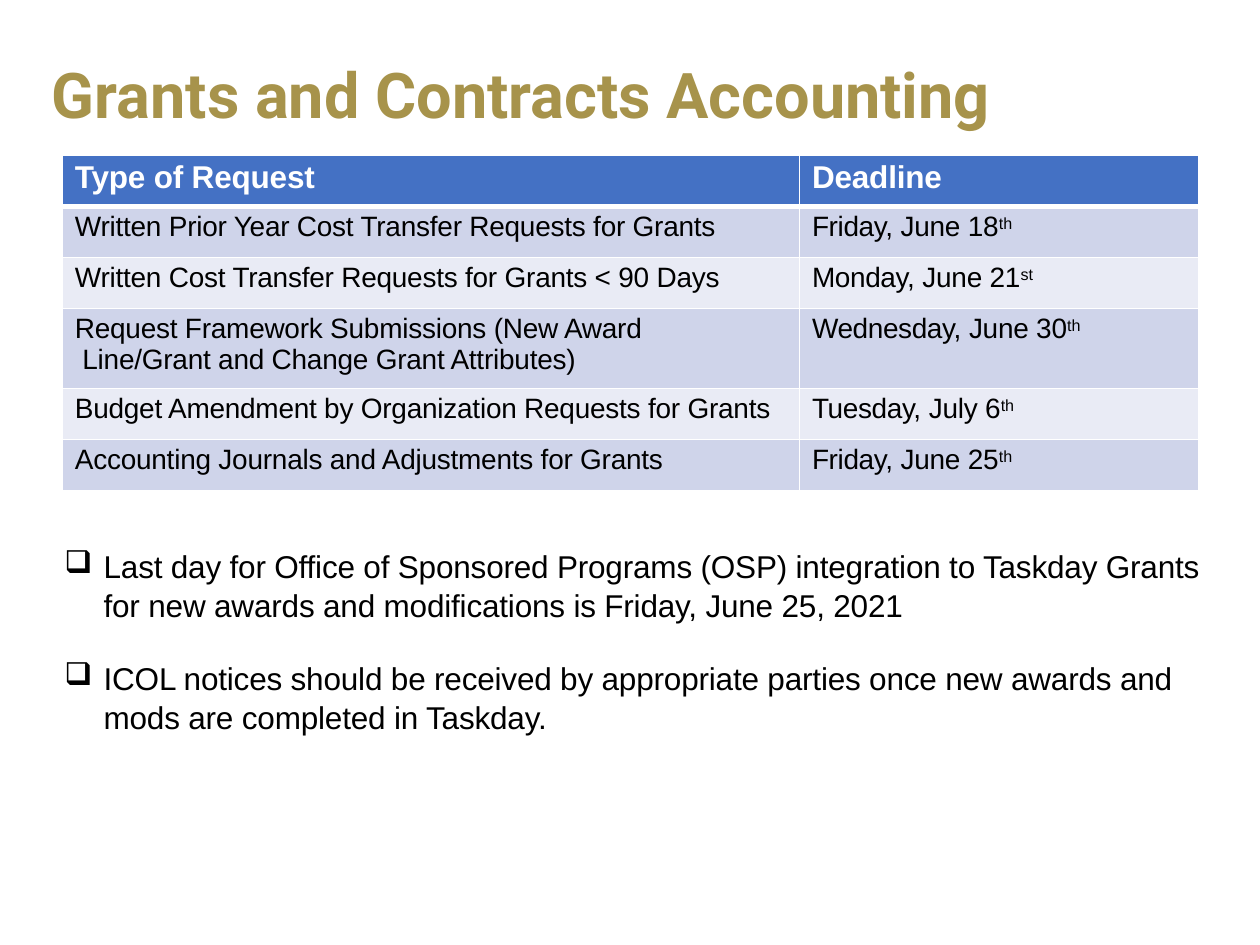
from lxml.etree import SubElement
from pptx import Presentation
from pptx.dml.color import RGBColor
from pptx.enum.text import MSO_ANCHOR, PP_ALIGN
from pptx.oxml.ns import qn
from pptx.util import Cm, Pt

GOLD = RGBColor(0xA7, 0x93, 0x4B)
BLUE = RGBColor(0x44, 0x71, 0xC4)
BAND_DARK = RGBColor(0xCF, 0xD4, 0xEA)
BAND_LIGHT = RGBColor(0xE9, 0xEB, 0xF5)
WHITE = RGBColor(0xFF, 0xFF, 0xFF)
BLACK = RGBColor(0x00, 0x00, 0x00)

HEADERS = ["Type of Request", "Deadline"]
# Request, then weekday, date and ordinal suffix of its deadline
REQUESTS = [
    ("Written Prior Year Cost Transfer Requests for Grants", "Friday, ", "June 18", "th"),
    ("Written Cost Transfer Requests for Grants < 90 Days", "Monday, ", "June 21", "st"),
    ("Request Framework Submissions (New Award\v Line/Grant and Change Grant Attributes)",
     "Wednesday, ", "June 30", "th"),
    ("Budget Amendment by Organization Requests for Grants", "Tuesday, ", "July 6", "th"),
    ("Accounting Journals and Adjustments for Grants", "Friday, ", "June 25", "th"),
]
NOTES = [
    "Last day for Office of Sponsored Programs (OSP) integration to Taskday Grants "
    "for new awards and modifications is Friday, June 25, 2021",
    "ICOL notices should be received by appropriate parties once new awards and "
    "mods are completed in Taskday.",
]
COLUMN_WIDTHS = [Cm(14.86), Cm(8.04)]
ROW_HEIGHT, TALL_ROW_HEIGHT = Cm(1.03), Cm(1.61)


def set_font(paragraph, size, color, name="Arial", bold=False):
    font = paragraph.font
    font.name, font.size, font.bold = name, Pt(size), bold
    font.color.rgb = color


def add_run(paragraph, text, spacing=-10):
    """Add text, with its letter spacing in hundredths of a point."""
    first = len(paragraph.runs)
    for index, line in enumerate(text.split("\v")):
        if index:
            paragraph.add_line_break()
        paragraph.add_run().text = line
    for run in paragraph.runs[first:]:
        run._r.get_or_add_rPr().set("spc", str(spacing))
    return paragraph.runs[-1]


def set_borders(cell, top=1, bottom=1):
    properties = cell._tc.get_or_add_tcPr()
    widths = {"a:lnL": 1, "a:lnR": 1, "a:lnT": top, "a:lnB": bottom}
    for index, (tag, width) in enumerate(widths.items()):
        line = SubElement(properties, qn(tag), w=str(Pt(width)))
        fill = SubElement(line, qn("a:solidFill"))
        SubElement(fill, qn("a:srgbClr"), val=str(WHITE))
        properties.insert(index, line)  # borders come before the fill


def format_cell(cell, fill, size, color, bold=False):
    cell.fill.solid()
    cell.fill.fore_color.rgb = fill
    cell.margin_left = cell.margin_right = cell.margin_bottom = 0
    cell.margin_top = Cm(0.1)
    cell.vertical_anchor = MSO_ANCHOR.TOP
    paragraph = cell.text_frame.paragraphs[0]
    paragraph._p.get_or_add_pPr().set("marL", str(Cm(0.25)))
    set_font(paragraph, size, color, bold=bold)
    return paragraph


def add_title(slide):
    title = slide.shapes.title
    title.left, title.top, title.width, title.height = Cm(0.79), Cm(0.56), Cm(23.83), Cm(2.82)
    title.text_frame.text = "Grants and Contracts Accounting"
    title.text_frame.vertical_anchor = MSO_ANCHOR.MIDDLE
    paragraph = title.text_frame.paragraphs[0]
    paragraph.alignment = PP_ALIGN.LEFT
    paragraph.line_spacing = 0.9
    set_font(paragraph, 36, GOLD, "Roboto", True)


def add_deadline_table(slide):
    table = slide.shapes.add_table(
        len(REQUESTS) + 1, len(HEADERS), Cm(1.26), Cm(3.13), sum(COLUMN_WIDTHS),
        ROW_HEIGHT * len(REQUESTS) + TALL_ROW_HEIGHT).table
    for column, width in zip(table.columns, COLUMN_WIDTHS):
        column.width = width
    table.rows[0].height = ROW_HEIGHT

    # Header row
    for column, text in enumerate(HEADERS):
        cell = table.cell(0, column)
        add_run(format_cell(cell, BLUE, 18, WHITE, True), text)
        set_borders(cell, bottom=3)

    # Banded request rows
    for row, (request, weekday, date, suffix) in enumerate(REQUESTS, start=1):
        table.rows[row].height = TALL_ROW_HEIGHT if "\v" in request else ROW_HEIGHT
        band = BAND_DARK if row % 2 else BAND_LIGHT
        cells = [table.cell(row, column) for column in range(len(HEADERS))]
        name, deadline = [format_cell(cell, band, 16, BLACK) for cell in cells]
        add_run(name, request)
        add_run(deadline, weekday, -20)
        add_run(deadline, date)
        ordinal = add_run(deadline, suffix, 0)
        ordinal.font.size = Pt(15.8)
        ordinal._r.get_or_add_rPr().set("baseline", "26000")
        for cell in cells:
            set_borders(cell, top=3 if row == 1 else 1)


def add_notes_list(slide):
    frame = slide.shapes.add_textbox(Cm(1.26), Cm(10.97), Cm(23.42), Cm(3.76)).text_frame
    frame.word_wrap = True
    frame.margin_left = frame.margin_right = frame.margin_bottom = 0
    frame.margin_top = Cm(0.03)
    for index, text in enumerate(NOTES):
        paragraph = frame.add_paragraph() if index else frame.paragraphs[0]
        properties = paragraph._p.get_or_add_pPr()
        properties.set("marL", str(Cm(0.83)))
        properties.set("indent", str(-Cm(0.79)))
        SubElement(properties, qn("a:buChar"), char="❑")
        paragraph.line_spacing = 1.04
        if index:
            paragraph.space_before = Pt(19)
        set_font(paragraph, 18, BLACK)
        add_run(paragraph, text)


def main():
    presentation = Presentation()
    presentation.slide_width, presentation.slide_height = Cm(25.4), Cm(19.05)
    slide = presentation.slides.add_slide(presentation.slide_layouts[5])
    add_title(slide)
    add_deadline_table(slide)
    add_notes_list(slide)
    presentation.save("out.pptx")


if __name__ == "__main__":
    main()
